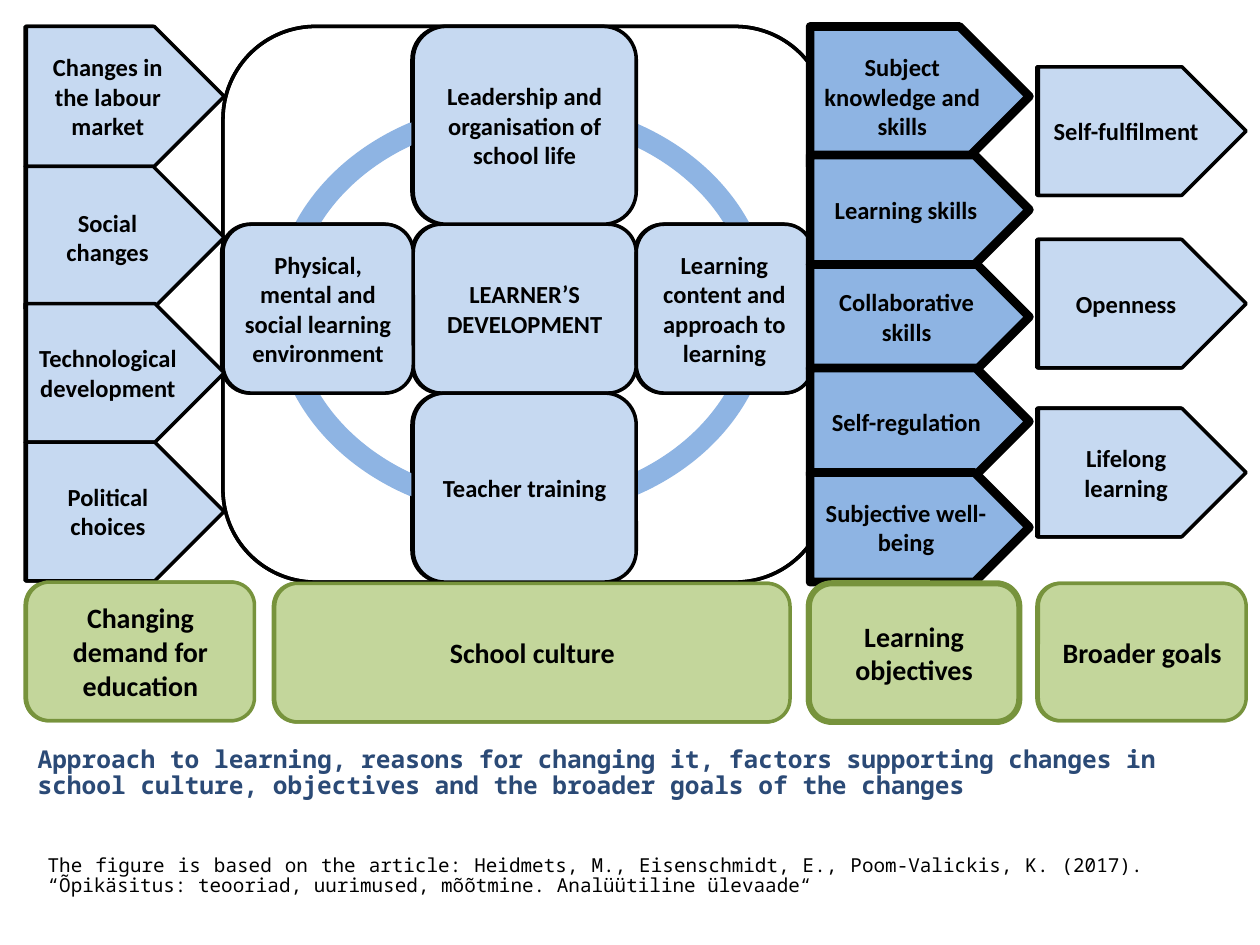
from pptx import Presentation
from pptx.dml.color import RGBColor
from pptx.enum.shapes import MSO_SHAPE as SHAPE
from pptx.enum.text import MSO_ANCHOR as ANCHOR, PP_ALIGN as ALIGN
from pptx.util import Inches, Pt

COLORS = {
    "sky": "C6D9F1", "blue": "8EB4E3", "green": "C3D69B",
    "olive": "77933C", "navy": "2B4A76", "black": "000000",
}


def rgb(name):
    return RGBColor.from_string(COLORS[name])


def add_box(kind, box, text, fill, line, width, size=14):
    sp = s.shapes.add_shape(kind, *[Inches(v) for v in box])
    sp.shadow.inherit = False
    if fill:
        sp.fill.solid()
        sp.fill.fore_color.rgb = rgb(fill)
    else:
        sp.fill.background()
    sp.line.color.rgb = rgb(line)
    sp.line.width = Pt(width)
    if text:
        tf = sp.text_frame
        tf.word_wrap = True
        tf.vertical_anchor = ANCHOR.MIDDLE
        p = tf.paragraphs[0]
        p.alignment = ALIGN.CENTER
        r = p.add_run()
        r.text = text
        for key, value in {"name": "Calibri", "size": Pt(size), "bold": True}.items():
            setattr(r.font, key, value)
        r.font.color.rgb = rgb("black")


prs = Presentation()
prs.slide_width, prs.slide_height = Inches(10), Inches(7.5)
s = prs.slides.add_slide(prs.slide_layouts[6])

factors = [
    (3.28, 1.78, 1.77, 1.34, "LEARNER’S DEVELOPMENT"),
    (3.28, 0.21, 1.77, 1.57, "Leadership and organisation of school life"),
    (5.05, 1.78, 1.4, 1.34, "Learning content and approach to learning"),
    (3.28, 3.12, 1.77, 1.5, "Teacher training"),
    (1.77, 1.78, 1.51, 1.34, "Physical, mental and social learning environment"),
]
demands = [
    (0.21, 1.11, "Changes in the labour market"),
    (1.32, 1.13, "Social changes"),
    (2.41, 1.1, "Technological development"),
    (3.51, 1.1, "Political choices"),
]
objectives = [
    (0.21, 1.11, "Subject knowledge and skills"),
    (1.23, 0.87, "Learning skills"),
    (2.1, 0.83, "Collaborative skills"),
    (2.92, 0.85, "Self-regulation"),
    (3.75, 0.87, "Subjective well-being"),
]
goals = [(0.53, "Self-fulfilment"), (1.9, "Openness"), (3.24, "Lifelong learning")]
headings = [
    (0.21, 4.62, 1.81, 1.1, "Changing demand for education"),
    (2.18, 4.63, 4.09, 1.1, "School culture"),
    (6.42, 4.63, 1.67, 1.1, "Learning objectives"),
    (8.24, 4.63, 1.65, 1.09, "Broader goals"),
]

for shift, arrow_line, heading_line in ((-0.01, 2, 2), (0, 5, 3.5)):
    add_box(SHAPE.OVAL, (2.26 + shift, 0.88, 3.78, 3.15), "", None, "blue", 12)
    add_box(SHAPE.ROUNDED_RECTANGLE, (1.77, 0.21, 4.8, 4.41), "", None, "black", 2)
    for x, y, w, h, text in factors:
        add_box(SHAPE.ROUNDED_RECTANGLE, (x + shift, y, w, h), text, "sky", "black", 2)
    for y, h, text in demands:
        add_box(SHAPE.PENTAGON, (0.21 + shift, y, 1.57, h), text, "sky", "black", 2)
    for y, h, text in objectives:
        add_box(SHAPE.PENTAGON, (6.43 + shift, y, 1.74, h), text, "blue", "black", arrow_line)
    for y, text in goals:
        add_box(SHAPE.PENTAGON, (8.24 + shift, y, 1.65, 1.02), text, "sky", "black", 2)
    for x, y, w, h, text in headings:
        width = heading_line if text == "Learning objectives" else 2
        add_box(SHAPE.ROUNDED_RECTANGLE, (x + shift, y, w, h), text, "green", "olive", width, 16)

captions = [
    ((0.2, 5.88, 9.53, 0.79), ALIGN.LEFT, 14, True, "navy",
     "Approach to learning, reasons for changing it, factors supporting changes in "
     "school culture, objectives and the broader goals of the changes"),
    ((0.28, 6.74, 8.9, 0.63), ALIGN.JUSTIFY, 11, False, "black",
     "The figure is based on the article: Heidmets, M., Eisenschmidt, E., "
     "Poom-Valickis, K. (2017). “Õpikäsitus: teooriad, uurimused, mõõtmine. "
     "Analüütiline ülevaade“"),
]
for box, align, size, bold, color, text in captions:
    tf = s.shapes.add_textbox(*[Inches(v) for v in box]).text_frame
    tf.word_wrap = True
    p = tf.paragraphs[0]
    p.alignment = align
    p.line_spacing = 0.9
    r = p.add_run()
    r.text = text
    for key, value in {"name": "Noto Sans Mono", "size": Pt(size), "bold": bold}.items():
        setattr(r.font, key, value)
    r.font.color.rgb = rgb(color)

prs.save("out.pptx")
